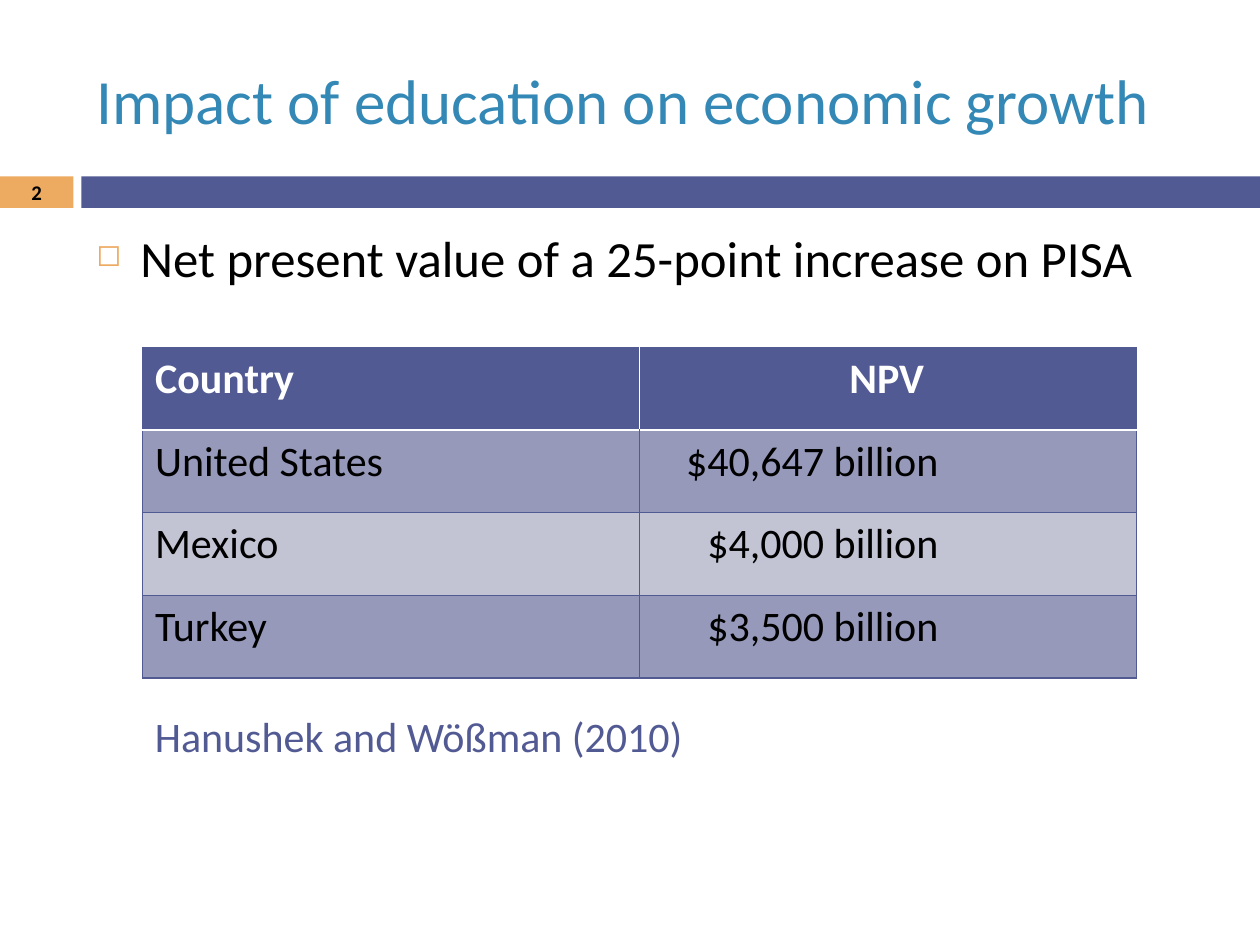
from pptx import Presentation
from pptx.dml.color import RGBColor
from pptx.enum.shapes import MSO_SHAPE
from pptx.enum.text import MSO_ANCHOR, PP_ALIGN
from pptx.oxml import parse_xml
from pptx.oxml.ns import nsdecls
from pptx.util import Pt

BLUE, ORANGE, WHITE, BLACK = "525A93", "EDAA61", "FFFFFF", "000000"


def rgb(color):
    return RGBColor.from_string(color)


def write(tf, text, size=24, color=BLACK, bold=False, align=PP_ALIGN.LEFT, anchor=MSO_ANCHOR.TOP):
    tf.word_wrap = True
    tf.vertical_anchor = anchor
    p = tf.paragraphs[0]
    p.alignment = align
    r = p.add_run()
    r.text = text
    r.font.name = "Calibri"
    r.font.size = Pt(size)
    r.font.bold = bold
    r.font.color.rgb = rgb(color)
    return p


prs = Presentation()
prs.slide_width, prs.slide_height = Pt(720), Pt(540)
s = prs.slides.add_slide(prs.slide_layouts[6])

for left, width, color in [(0, 42, ORANGE), (46.5, 673.5, BLUE)]:
    sp = s.shapes.add_shape(MSO_SHAPE.RECTANGLE, Pt(left), Pt(100.8), Pt(width), Pt(18))
    sp.shadow.inherit = False
    sp.fill.solid()
    sp.fill.fore_color.rgb = rgb(color)
    sp.line.fill.background()

texts = [
    (48, 18, 642, 78, "Impact of education on economic growth",
     dict(size=36, color="3488B6", anchor=MSO_ANCHOR.MIDDLE)),
    (0, 100, 42, 19.5, "2",
     dict(size=11.9, bold=True, align=PP_ALIGN.CENTER, anchor=MSO_ANCHOR.MIDDLE)),
    (81.4, 402.5, 322.6, 36, "Hanushek and Wößman (2010)", dict(color=BLUE)),
]
for left, top, width, height, text, style in texts:
    tb = s.shapes.add_textbox(Pt(left), Pt(top), Pt(width), Pt(height))
    write(tb.text_frame, text, **style)

body = s.shapes.add_textbox(Pt(48), Pt(126), Pt(642), Pt(354))
p = write(body.text_frame, "Net present value of a 25-point increase on PISA", size=29)
pPr = p._p.get_or_add_pPr()
pPr.set("marL", str(Pt(25.2)))
pPr.set("indent", str(Pt(-25.2)))
for xml in [
    f'<a:buClr {nsdecls("a")}><a:srgbClr val="{ORANGE}"/></a:buClr>',
    f'<a:buSzPct {nsdecls("a")} val="60000"/>',
    f'<a:buChar {nsdecls("a")} char="◻"/>',
]:
    pPr.append(parse_xml(xml))

rows = [
    ("Country", "NPV"),
    ("United States", "$40,647 billion"),
    ("Mexico", "$4,000 billion"),
    ("Turkey", "$3,500 billion"),
]
fills = [BLUE, "9699BA", "C2C4D4", "9699BA"]
frame = s.shapes.add_table(4, 2, Pt(81.4), Pt(198.6), Pt(568), Pt(188.8))
table = frame.table
for row in table.rows:
    row.height = Pt(47.2)
for i, values in enumerate(rows):
    for j, text in enumerate(values):
        cell = table.cell(i, j)
        header = i == 0
        if j == 1:
            cell.margin_right = Pt(8.6 if header else 113)
        align = PP_ALIGN.LEFT if j == 0 else PP_ALIGN.CENTER if header else PP_ALIGN.RIGHT
        write(cell.text_frame, text, color=WHITE if header else BLACK, bold=header, align=align)
        sides = {side: (BLUE, 0.79) for side in "LRTB"}
        if header:
            sides["B"] = (WHITE, 1.5)
            del sides["R" if j == 0 else "L"]
        elif i == 1:
            sides["T"] = (WHITE, 1.5)
        tcPr = cell._tc.get_or_add_tcPr()
        for side, (color, width) in sides.items():
            tcPr.append(parse_xml(
                f'<a:ln{side} {nsdecls("a")} w="{Pt(width)}"><a:solidFill>'
                f'<a:srgbClr val="{color}"/></a:solidFill></a:ln{side}>'))
        cell.fill.solid()
        cell.fill.fore_color.rgb = rgb(fills[i])

prs.save("out.pptx")
